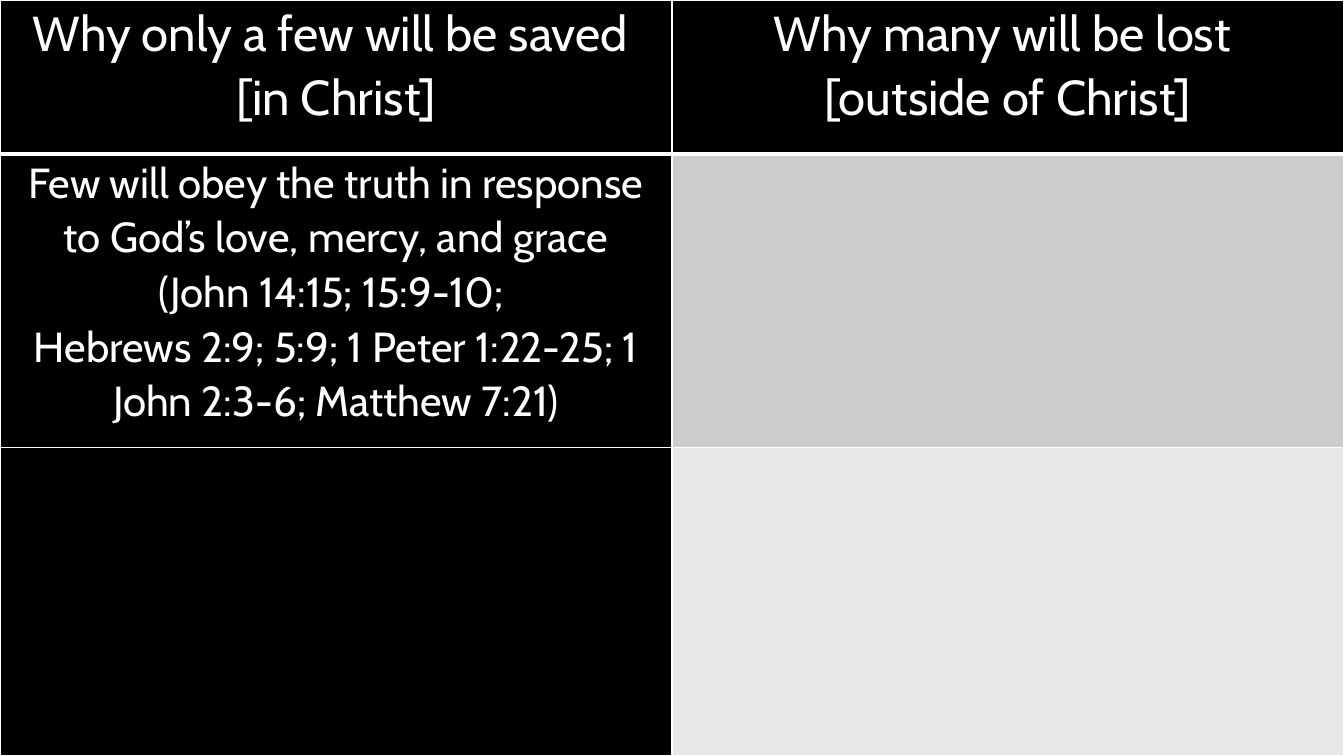
from lxml import etree
from pptx import Presentation
from pptx.dml.color import RGBColor
from pptx.enum.text import PP_ALIGN
from pptx.oxml.ns import qn
from pptx.util import Inches, Pt

CENTER = PP_ALIGN.CENTER
BLACK = RGBColor(0x00, 0x00, 0x00)
WHITE = RGBColor(0xFF, 0xFF, 0xFF)
MID_GREY = RGBColor(0xCC, 0xCC, 0xCC)
LIGHT_GREY = RGBColor(0xE7, 0xE7, 0xE7)

COLUMN_WIDTH = 6.665
ROW_HEIGHTS = [1.53, 2.91, 3.06]
TEXT_SIZES = [35, 30, 30]
FILLS = [[BLACK, BLACK], [BLACK, MID_GREY], [BLACK, LIGHT_GREY]]
TEXTS = [
    [
        ["Why only a few will be saved ", "[in Christ]"],
        ["Why many will be lost ", "[outside of Christ]"],
    ],
    [
        [
            "Few will obey the truth in response to God’s love, mercy, and grace",
            "(John 14:15; 15:9-10; ",
            "Hebrews 2:9; 5:9; 1 Peter 1:22-25; 1 John 2:3-6; Matthew 7:21)",
        ],
        [],
    ],
    [[], []],
]


def set_borders(cell, widths):
    properties = cell._tc.get_or_add_tcPr()
    for position, (side, width) in enumerate(widths.items()):
        line = etree.Element(qn(f"a:ln{side}"), w=str(Pt(width)))
        fill = etree.SubElement(line, qn("a:solidFill"))
        etree.SubElement(fill, qn("a:srgbClr"), val=str(WHITE))
        properties.insert(position, line)


deck = Presentation()
deck.slide_width = Inches(13.33)
deck.slide_height = Inches(7.5)
page = deck.slides.add_slide(deck.slide_layouts[6])
page.background.fill.solid()
page.background.fill.fore_color.rgb = BLACK

table = page.shapes.add_table(
    3, 2, 0, 0, deck.slide_width, deck.slide_height
).table
for column in table.columns:
    column.width = Inches(COLUMN_WIDTH)

for row_index, height in enumerate(ROW_HEIGHTS):
    table.rows[row_index].height = Inches(height)
    for column_index, lines in enumerate(TEXTS[row_index]):
        cell = table.cell(row_index, column_index)
        cell.fill.solid()
        cell.fill.fore_color.rgb = FILLS[row_index][column_index]
        cell.margin_left = cell.margin_right = Inches(0.07)
        cell.margin_top = cell.margin_bottom = 0
        set_borders(cell, {
            "L": 1,
            "R": 1,
            "T": 3 if row_index == 1 else 1,
            "B": 3 if row_index == 0 else 1,
        })
        for line_index, text in enumerate(lines):
            frame = cell.text_frame
            para = frame.add_paragraph() if line_index else frame.paragraphs[0]
            para.text = text
            para.alignment = CENTER
            para.line_spacing = 1.07
            para.font.name = "Cabin"
            para.font.size = Pt(TEXT_SIZES[row_index])
            para.font.bold = False
            para.font.color.rgb = WHITE

deck.save("out.pptx")
